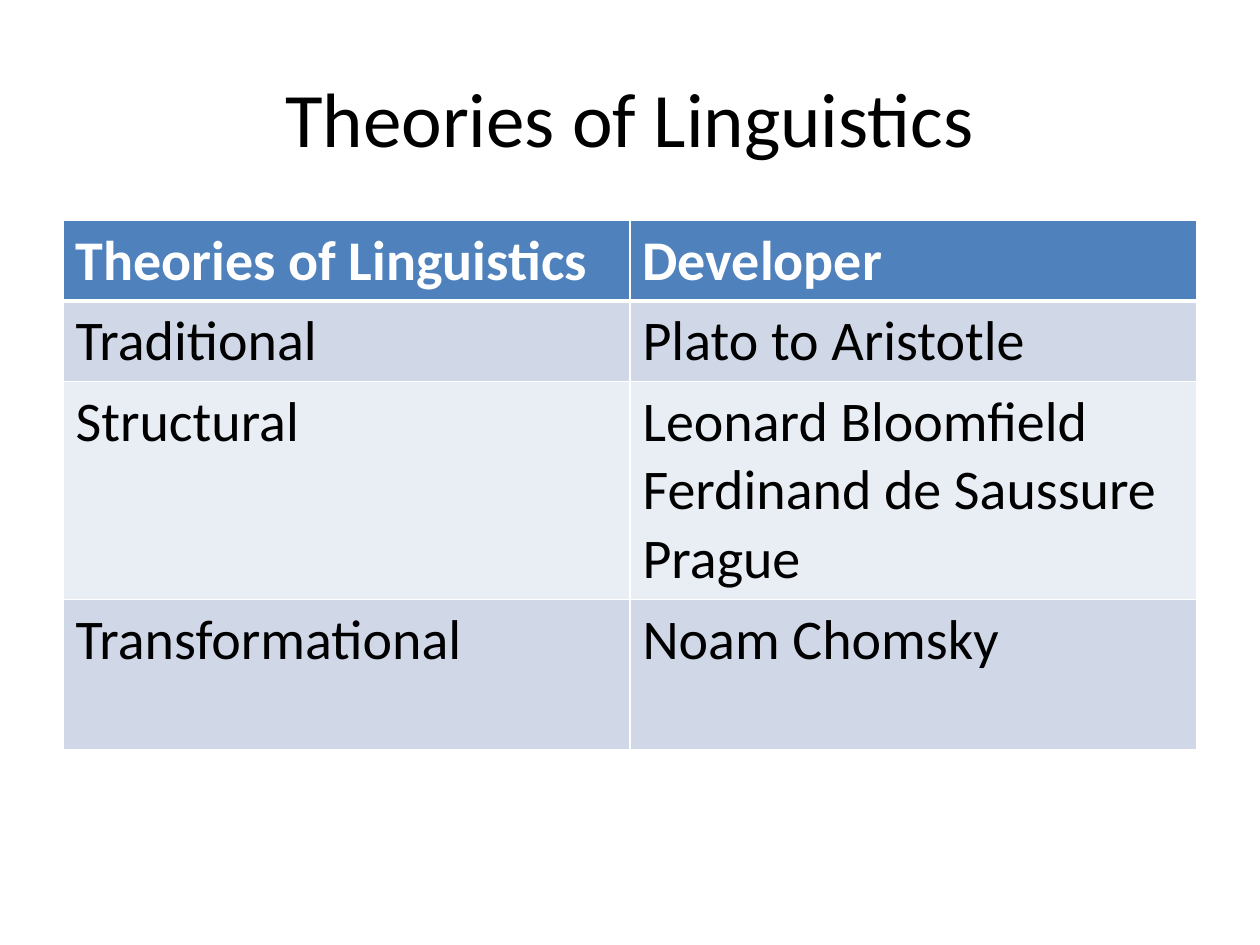
from lxml.etree import SubElement
from pptx import Presentation
from pptx.dml.color import RGBColor as Color
from pptx.enum.text import MSO_ANCHOR as Anchor, PP_ALIGN as Align
from pptx.oxml.ns import qn
from pptx.util import Inches, Pt

TITLE = "Theories of Linguistics"
ROWS = [
    ("Theories of Linguistics", "Developer"),
    ("Traditional", "Plato to Aristotle"),
    ("Structural", "Leonard Bloomfield\nFerdinand de Saussure\nPrague"),
    ("Transformational", "Noam Chomsky"),
]
ROW_HEIGHTS = [0.64, 0.64, 1.73, 1.19]
COLORS = {
    "header": "4F81BD",
    "odd": "D0D8E8",
    "even": "E9EDF4",
    "white": "FFFFFF",
    "black": "000000",
}
FONT = "Calibri"
WIDTH, HEIGHT = 10, 7.5
MARGIN = WIDTH * 0.05
CONTENT_WIDTH = WIDTH - 2 * MARGIN


def style_text(frame, size, color, bold=False, align=Align.LEFT):
    for para in frame.paragraphs:
        para.alignment = align
        for span in para.runs:
            span.font.name = FONT
            span.font.size = Pt(size)
            span.font.bold = bold
            span.font.color.rgb = Color.from_string(COLORS[color])


def add_borders(cell, widths):
    properties = cell._tc.get_or_add_tcPr()
    for side, width in widths.items():
        line = SubElement(properties, qn(f"a:ln{side}"), w=str(Pt(width)))
        fill = SubElement(line, qn("a:solidFill"))
        SubElement(fill, qn("a:srgbClr"), val=COLORS["white"])


def add_title(page):
    box = page.shapes.add_textbox(
        Inches(MARGIN), Inches(HEIGHT * 0.04), Inches(CONTENT_WIDTH), Inches(1.25)
    )
    frame = box.text_frame
    frame.word_wrap = True
    frame.vertical_anchor = Anchor.MIDDLE
    frame.text = TITLE
    style_text(frame, 44, "black", align=Align.CENTER)


def add_theories(page):
    columns = len(ROWS[0])
    table = page.shapes.add_table(
        len(ROWS), columns, Inches(MARGIN), Inches(1.75),
        Inches(CONTENT_WIDTH), Inches(sum(ROW_HEIGHTS)),
    ).table
    for column in table.columns:
        column.width = Inches(CONTENT_WIDTH / columns)
    for index, (texts, height) in enumerate(zip(ROWS, ROW_HEIGHTS)):
        table.rows[index].height = Inches(height)
        header = index == 0
        shade = "header" if header else ("even", "odd")[index % 2]
        borders = {"L": 1, "R": 1, "T": 3 if index == 1 else 1, "B": 3 if header else 1}
        for cell, text in zip(table.rows[index].cells, texts):
            cell.text_frame.text = text
            style_text(cell.text_frame, 32, "white" if header else "black", bold=header)
            add_borders(cell, borders)
            cell.fill.solid()
            cell.fill.fore_color.rgb = Color.from_string(COLORS[shade])


def main():
    deck = Presentation()
    deck.slide_width, deck.slide_height = Inches(WIDTH), Inches(HEIGHT)
    page = deck.slides.add_slide(deck.slide_layouts[6])
    add_title(page)
    add_theories(page)
    deck.save("out.pptx")


if __name__ == "__main__":
    main()
